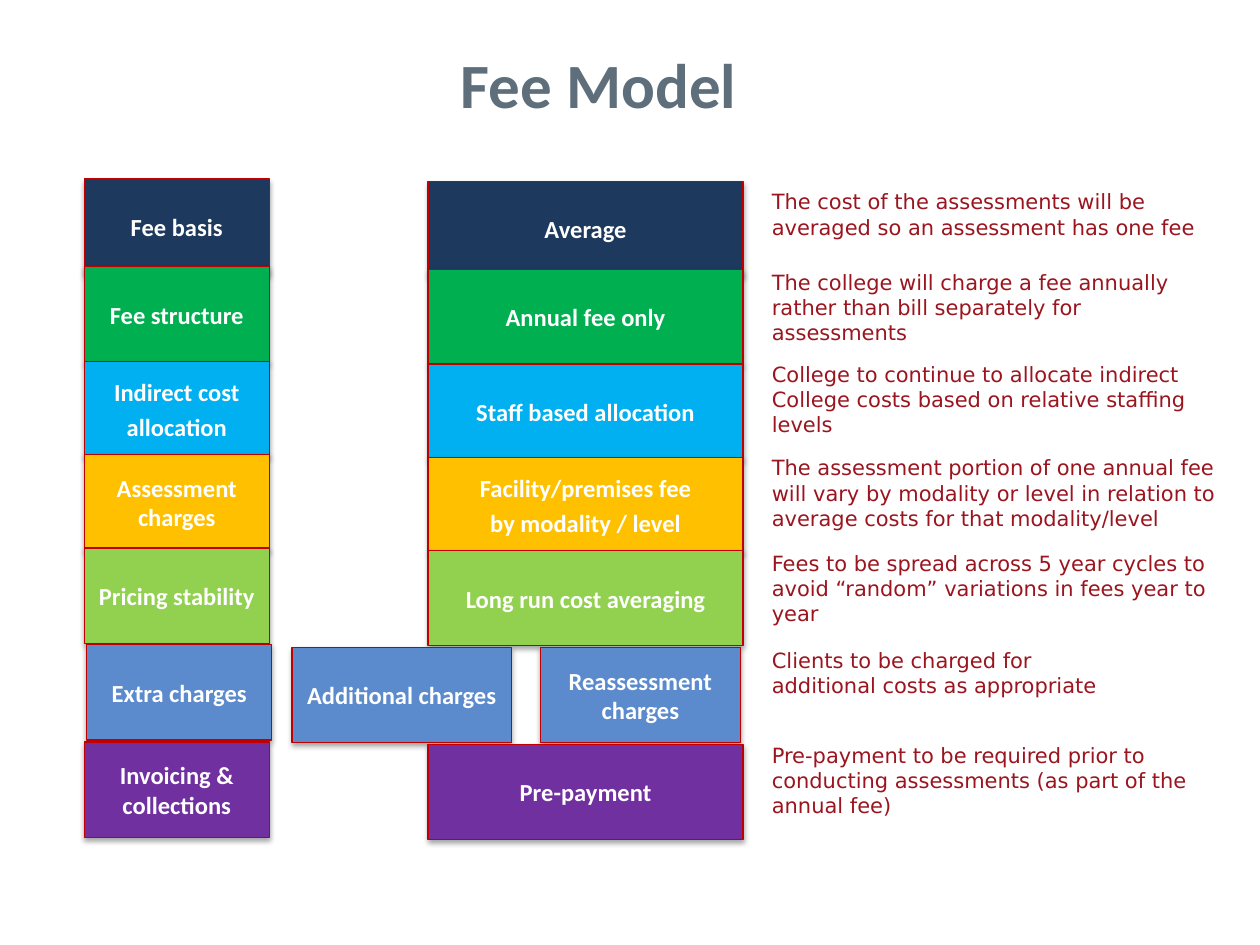
from lxml.etree import SubElement
from pptx import Presentation
from pptx.dml.color import RGBColor
from pptx.enum.shapes import MSO_SHAPE
from pptx.enum.text import MSO_ANCHOR, PP_ALIGN
from pptx.oxml.ns import qn
from pptx.util import Cm, Pt

HUES = {
    "title": "5E6E7B", "note": "9B151F", "edge": "C00000", "white": "FFFFFF",
    "navy": "1D395E", "green": "00B050", "sky": "00B0F0", "gold": "FFC000",
    "lime": "92D050", "blue": "5B8BCC", "plum": "7030A0", "black": "000000",
}
HIGH = 1.92
LABEL = (0, 3.73)
WIDE = (6.93, 6.35)
LEFT, MID = (4.19, 4.42), (9.19, 4.04)

ROWS = [
    (3.61, 0, "navy", "Fee basis", [(WIDE, "Average")], 0.2, 9.07,
     "The cost of the assessments will be averaged so an assessment has one fee"),
    (5.38, 0, "green", "Fee structure", [(WIDE, "Annual fee only")], 0.05, 9.07,
     "The college will charge a fee annually rather than bill separately for assessments"),
    (7.29, 0, "sky", "Indirect cost\nallocation", [(WIDE, "Staff based allocation")], 0, 9.07,
     "College to continue to allocate indirect College costs based on relative staffing levels"),
    (9.17, 0, "gold", "Assessment charges",
     [(WIDE, "Facility/premises fee\nby modality / level")], 0, 9.07,
     "The assessment portion of one annual fee will vary by modality or level "
     "in relation to average costs for that modality/level"),
    (11.05, 0, "lime", "Pricing stability", [(WIDE, "Long run cost averaging")], 0.05, 9.07,
     "Fees to be spread across 5 year cycles to avoid “random” variations in fees year to year"),
    (13.0, 0.05, "blue", "Extra charges",
     [(LEFT, "Additional charges"), (MID, "Reassessment charges")], 0.05, 6.96,
     "Clients to be charged for additional costs as appropriate"),
    (14.96, 0, "plum", "Invoicing & collections", [(WIDE, "Pre-payment")], 0, 9.5,
     "Pre-payment to be required prior to conducting assessments (as part of the annual fee)"),
]


def tint(name):
    return RGBColor.from_string(HUES[name])


def write(frame, text, size=14, font="Calibri", hue="white", bold=True,
          align=PP_ALIGN.CENTER, anchor=MSO_ANCHOR.MIDDLE, after=3, inset=0):
    frame.word_wrap = True
    frame.vertical_anchor = anchor
    if inset is not None:
        frame.margin_left = frame.margin_right = Cm(inset)
        frame.margin_top = frame.margin_bottom = Cm(inset)
    frame.text = text
    for para in frame.paragraphs:
        para.alignment = align
        para.space_before = Pt(0)
        para.space_after = Pt(after)
        para.font.size = Pt(size)
        para.font.name = font
        para.font.bold = bold
        para.font.color.rgb = tint(hue)


def shade(shape):
    shape.shadow.inherit = False
    glow = SubElement(shape._element.spPr.find(qn("a:effectLst")), qn("a:outerShdw"),
                      blurRad=str(Pt(3.1)), dist=str(Pt(1.8)), dir="5400000", rotWithShape="0")
    tone = SubElement(glow, qn("a:srgbClr"), val=HUES["black"])
    SubElement(tone, qn("a:alpha"), val="35000")


def block(slide, box, hue, text):
    shape = slide.shapes.add_shape(MSO_SHAPE.RECTANGLE, *map(Cm, box))
    shape.fill.solid()
    shape.fill.fore_color.rgb = tint(hue)
    shape.line.color.rgb = tint("edge")
    shape.line.width = Pt(0.75)
    shade(shape)
    write(shape.text_frame, text)


def note(slide, box, text):
    area = slide.shapes.add_textbox(*map(Cm, box))
    write(area.text_frame, text, size=12, font="DejaVu Sans", hue="note", bold=False,
          align=PP_ALIGN.LEFT, anchor=MSO_ANCHOR.TOP)


def head(slide, box, text):
    title = slide.shapes.title
    title.left, title.top, title.width, title.height = map(Cm, box)
    write(title.text_frame, text, size=36, hue="title", anchor=MSO_ANCHOR.BOTTOM,
          after=0, inset=None)


def band(slide, left, top, shift, hue, label, parts, drop, width, text):
    start, wide = LABEL
    block(slide, (left + start + shift, top, wide, HIGH), hue, label)
    for (start, wide), name in parts:
        block(slide, (left + start, top + 0.05, wide, HIGH), hue, name)
    note(slide, (left + 13.86, top + drop, width, 1.1), text)


def main():
    deck = Presentation()
    deck.slide_width, deck.slide_height = Cm(25.4), Cm(19.05)
    slide = deck.slides.add_slide(deck.slide_layouts[5])
    head(slide, (1.07, 0.84, 22, 1.73), "Fee Model")
    for top, *rest in ROWS:
        band(slide, 1.7, top, *rest)
    deck.save("out.pptx")


if __name__ == "__main__":
    main()
